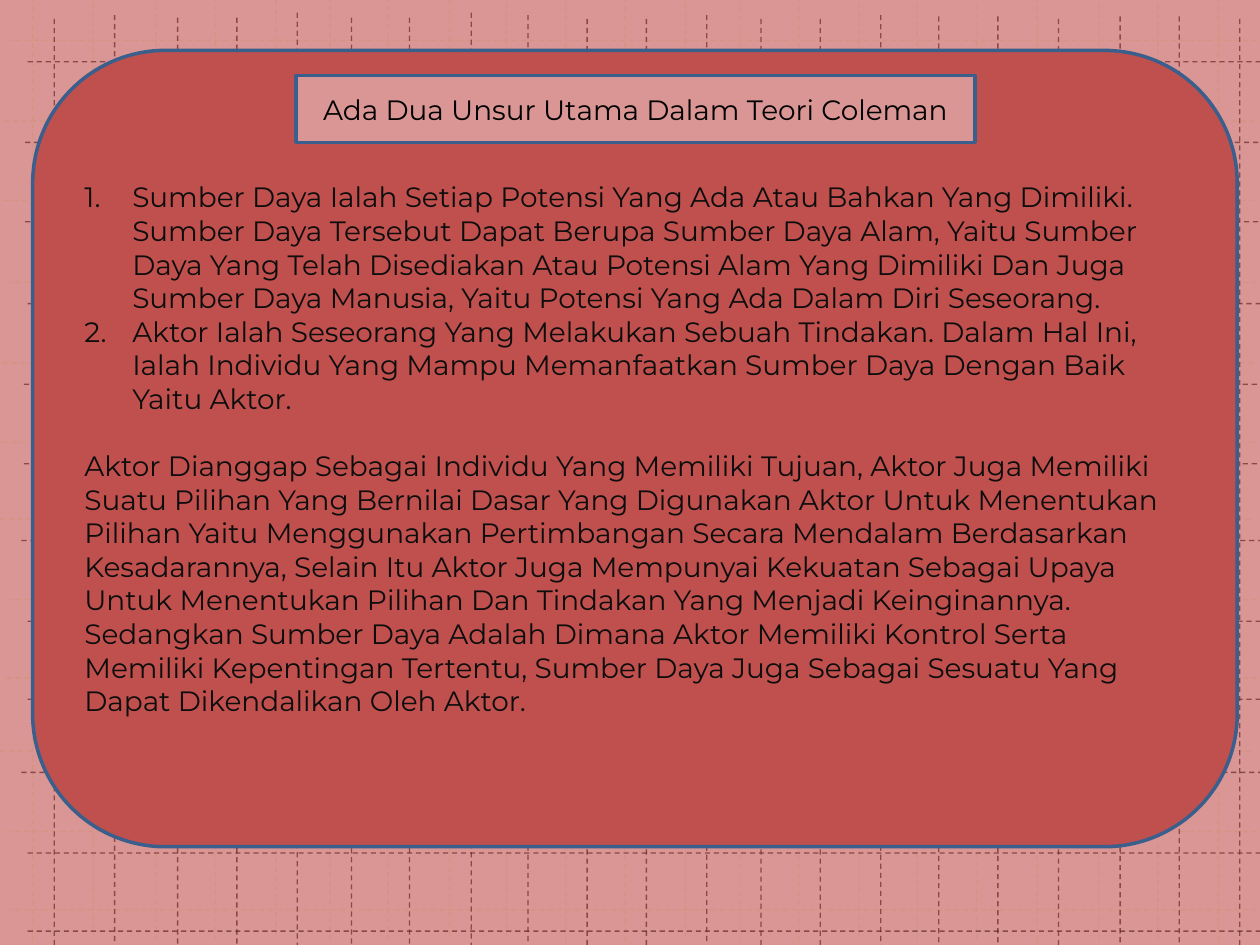
from lxml.etree import SubElement
from pptx import Presentation
from pptx.dml.color import RGBColor
from pptx.enum.dml import MSO_LINE
from pptx.enum.shapes import MSO_CONNECTOR, MSO_SHAPE
from pptx.enum.text import MSO_ANCHOR, MSO_AUTO_SIZE, PP_ALIGN
from pptx.oxml.ns import qn
from pptx.util import Inches, Pt

COLUMNS = {0.26: -0.02, 0.74: -0.05, 1.24: -0.03, 1.71: -0.03, 2.19: -0.07,
           2.62: -0.03, 3.08: -0.03, 3.57: -0.07, 4.02: -0.05, 4.49: -0.02,
           4.96: -0.02, 5.44: -0.05, 5.87: -0.02, 6.34: -0.02, 6.82: -0.05,
           7.28: -0.04, 7.75: -0.04, 8.23: -0.02, 8.72: -0.04, 9.19: -0.04,
           9.67: -0.02}
ROWS = {0.32: 0.05, 0.96: 0.03, 1.59: 0.03, 2.24: 0.05, 2.88: 0.02, 3.51: 0.02,
        4.12: 0, 4.76: 0.05, 5.38: 0.05, 5.96: 0, 6.6: 0.05, 7.22: 0.05}

TITLE = "Ada Dua Unsur Utama Dalam Teori Coleman"
ELEMENTS = [
    "Sumber Daya Ialah Setiap Potensi Yang Ada Atau Bahkan Yang Dimiliki. "
    "Sumber Daya Tersebut Dapat Berupa Sumber Daya Alam, Yaitu Sumber Daya "
    "Yang Telah Disediakan Atau Potensi Alam Yang Dimiliki Dan Juga Sumber Daya "
    "Manusia, Yaitu Potensi Yang Ada Dalam Diri Seseorang.",
    "Aktor Ialah Seseorang Yang Melakukan Sebuah Tindakan. Dalam Hal Ini, Ialah "
    "Individu Yang Mampu Memanfaatkan Sumber Daya Dengan Baik Yaitu Aktor.",
]
EXPLANATION = (
    "Aktor Dianggap Sebagai Individu Yang Memiliki Tujuan, Aktor Juga Memiliki "
    "Suatu Pilihan Yang Bernilai Dasar Yang Digunakan Aktor Untuk Menentukan "
    "Pilihan Yaitu Menggunakan Pertimbangan Secara Mendalam Berdasarkan "
    "Kesadarannya, Selain Itu Aktor Juga Mempunyai Kekuatan Sebagai Upaya Untuk "
    "Menentukan Pilihan Dan Tindakan Yang Menjadi Keinginannya. Sedangkan Sumber "
    "Daya Adalah Dimana Aktor Memiliki Kontrol Serta Memiliki Kepentingan "
    "Tertentu, Sumber Daya Juga Sebagai Sesuatu Yang Dapat Dikendalikan Oleh Aktor."
)


def rgb(value):
    """Turn a hex string into a colour."""
    return RGBColor.from_string(value)


class SlideBuilder:
    """Hold the style and the current slide."""

    font, size, line_height = "Montserrat", Pt(16), Pt(19.2)
    pink, red, blue = "D99694", "C0504D", "3A5F8C"

    def __init__(self, s):
        """Keep the slide and colour its background."""
        self.s = s
        s.background.fill.solid()
        s.background.fill.fore_color.rgb = rgb(self.pink)

    def grid(self, color, shift):
        """Draw one group of dashed grid lines, shifted both ways."""
        group = self.s.shapes.add_group_shape()
        lines = [(x, y, x, y + 7.5) for x, y in COLUMNS.items()]
        lines += [(x, y, x + 9.95, y) for y, x in ROWS.items()]
        for line in lines:
            ends = [Inches(v + shift) for v in line]
            c = group.shapes.add_connector(MSO_CONNECTOR.STRAIGHT, *ends)
            c.line.width = Pt(0.75)
            c.line.color.rgb = rgb(color)
            c.line.dash_style = MSO_LINE.DASH
            clr = c.line.fill.fore_color and c.element.spPr.find(".//" + qn("a:srgbClr"))
            SubElement(clr, qn("a:alpha"), val="68000")
            SubElement(c.element.spPr, qn("a:effectLst"))

    def box(self, sp, fill):
        """Fill a shape and give it the blue outline."""
        sp.fill.solid()
        sp.fill.fore_color.rgb = rgb(fill)
        sp.line.color.rgb = rgb(self.blue)
        sp.line.width = Pt(2)

    def panel(self, x, y, w, h):
        """Draw the large rounded panel."""
        sp = self.s.shapes.add_shape(MSO_SHAPE.ROUNDED_RECTANGLE, Inches(x),
                                     Inches(y), Inches(w), Inches(h))
        sp.shadow.inherit = False
        self.box(sp, self.red)

    def place(self, sp, x, y, w, h):
        """Move a placeholder to its position and to the front."""
        sp.left, sp.top, sp.width, sp.height = map(Inches, (x, y, w, h))
        self.s.shapes.element.append(sp.element)
        tf = sp.text_frame
        tf.word_wrap = True
        tf.auto_size = MSO_AUTO_SIZE.NONE
        tf.vertical_anchor = MSO_ANCHOR.MIDDLE
        return tf

    def format(self, p, color, align):
        """Apply the text style to a paragraph."""
        p.alignment = align
        p.space_before = Pt(0)
        for r in p.runs:
            r.font.name = self.font
            r.font.size = self.size
            r.font.color.rgb = rgb(color)

    def title(self, text, *at):
        """Fill the boxed title."""
        sp = self.s.shapes.title
        tf = self.place(sp, *at)
        self.box(sp, self.pink)
        tf.text = text
        self.format(tf.paragraphs[0], "000000", PP_ALIGN.CENTER)

    def body(self, items, closing, *at):
        """Fill the numbered list and its closing paragraph."""
        tf = self.place(self.s.placeholders[1], *at)
        tf.text = "\n".join([*items, closing])
        for i, p in enumerate(tf.paragraphs):
            self.format(p, "0D0D0D", PP_ALIGN.LEFT)
            numbered = i < len(items)
            if not numbered:
                p.space_before = self.line_height
            indent = Inches(0.38) if numbered else 0
            pPr = p._p.get_or_add_pPr()
            pPr.set("marL", str(indent))
            pPr.set("indent", str(-indent))
            if numbered:
                SubElement(pPr, qn("a:buFont"), typeface="+mj-lt")
                SubElement(pPr, qn("a:buAutoNum"), type="arabicPeriod")
            else:
                SubElement(pPr, qn("a:buNone"))


def main():
    """Build the slide and save it."""
    prs = Presentation()
    prs.slide_width, prs.slide_height = Inches(10), Inches(7.5)
    b = SlideBuilder(prs.slides.add_slide(prs.slide_layouts[1]))
    b.grid("D3947A", 0)
    b.grid("632523", 0.17)
    b.panel(0.26, 0.4, 9.56, 6.32)
    b.body(ELEMENTS, EXPLANATION, 0.57, 0.71, 8.94, 5.7)
    b.title(TITLE, 2.35, 0.6, 5.39, 0.53)
    prs.save("out.pptx")


if __name__ == "__main__":
    main()
